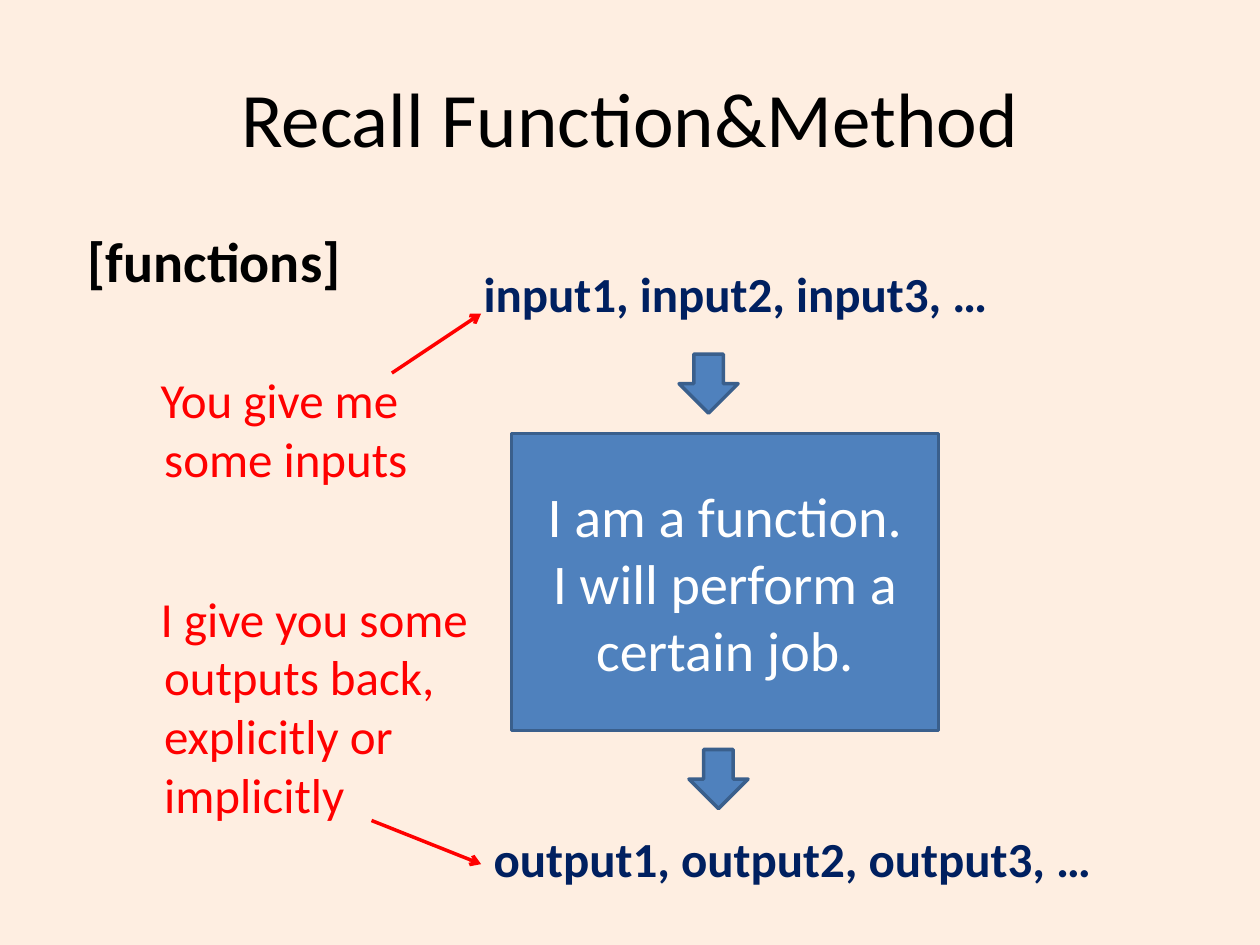
"""Build a slide that recalls what a function does with inputs and outputs."""
from lxml import etree
from pptx import Presentation
from pptx.dml.color import RGBColor
from pptx.enum.shapes import MSO_CONNECTOR, MSO_SHAPE
from pptx.enum.text import MSO_ANCHOR, PP_ALIGN
from pptx.oxml.ns import qn
from pptx.util import Cm, Pt

LEFT, CENTER = PP_ALIGN.LEFT, PP_ALIGN.CENTER
TOP, MIDDLE = MSO_ANCHOR.TOP, MSO_ANCHOR.MIDDLE
RECT, DOWN = MSO_SHAPE.RECTANGLE, MSO_SHAPE.DOWN_ARROW
STRAIGHT = MSO_CONNECTOR.STRAIGHT

FONT = "Calibri"
BACK, BLUE, EDGE = "FEEEE1", "4F81BD", "3A5F8C"
BLACK, WHITE, NAVY, RED = "000000", "FFFFFF", "002060", "FF0000"

TITLE = ("Recall Function&Method", (1.27, 0.76, 22.86, 3.18))
HEAD = ("[functions]", (1.27, 4.45, 22.86, 14.6))
JOB = ("I am a function.\nI will perform a certain job.", (10.31, 8.74, 8.61, 5.99))
FLOWS = [
    ("input1, input2, input3, …", (9.5, 5.33, 11.2, 1.4)),
    ("output1, output2, output3, …", (9.7, 16.71, 15.7, 1.4)),
]
NOTES = [
    ("You give me some inputs", (2.11, 7.32, 8.2, 3)),
    ("I give you some outputs back, explicitly or implicitly", (2.11, 11.73, 8.2, 5)),
]
STEPS = [(13.69, 7.14), (13.89, 15.11)]
SIDE = 1.19
LINKS = [(7.9, 7.52, 9.7, 6.32), (7.49, 16.54, 9.7, 17.42)]


def cms(nums):
    return [Cm(n) for n in nums]


def color(code):
    return RGBColor.from_string(code)


def write(frame, text, size, hue, bold=False, align=LEFT, anchor=TOP, gap=1, inset=0, hang=0):
    frame.text = text
    frame.word_wrap = True
    frame.vertical_anchor = anchor
    for para in frame.paragraphs:
        para.alignment = align
        para.line_spacing = gap
        props = para._p.get_or_add_pPr()
        props.set("marL", str(Cm(inset)))
        props.set("indent", str(-Cm(hang)))
        for run in para.runs:
            font = run.font
            font.name, font.size, font.bold = FONT, Pt(size), bold
            font.color.rgb = color(hue)


def label(shapes, item, size, hue, **opts):
    text, area = item
    write(shapes.add_textbox(*cms(area)).text_frame, text, size, hue, **opts)


def block(shapes, kind, area):
    shape = shapes.add_shape(kind, *cms(area))
    shape.shadow.inherit = False
    shape.fill.solid()
    shape.fill.fore_color.rgb = color(BLUE)
    shape.line.color.rgb = color(EDGE)
    shape.line.width = Pt(2)
    return shape


def link(shapes, ends):
    wire = shapes.add_connector(STRAIGHT, *cms(ends))
    wire.line.color.rgb = color(RED)
    wire.line.width = Pt(2)
    etree.SubElement(wire.line._get_or_add_ln(), qn("a:tailEnd"), type="arrow")
    etree.SubElement(wire._element.spPr, qn("a:effectLst"))


def main():
    deck = Presentation()
    deck.slide_width, deck.slide_height = cms((25.4, 19.05))
    slide = deck.slides.add_slide(deck.slide_layouts[6])
    fill = slide.background.fill
    fill.solid()
    fill.fore_color.rgb = color(BACK)
    shapes = slide.shapes
    label(shapes, TITLE, 44, BLACK, align=CENTER, anchor=MIDDLE)
    label(shapes, HEAD, 32, BLACK, bold=True, inset=0.25)
    text, area = JOB
    box = block(shapes, RECT, area)
    write(box.text_frame, text, 32, WHITE, align=CENTER, anchor=MIDDLE)
    for flow in FLOWS:
        label(shapes, flow, 28, NAVY, bold=True, gap=0.9)
    for spot in STEPS:
        block(shapes, DOWN, (*spot, SIDE, SIDE))
    for ends in LINKS:
        link(shapes, ends)
    for note in NOTES:
        label(shapes, note, 28, RED, inset=0.95, hang=0.07)
    deck.save("out.pptx")


if __name__ == "__main__":
    main()
